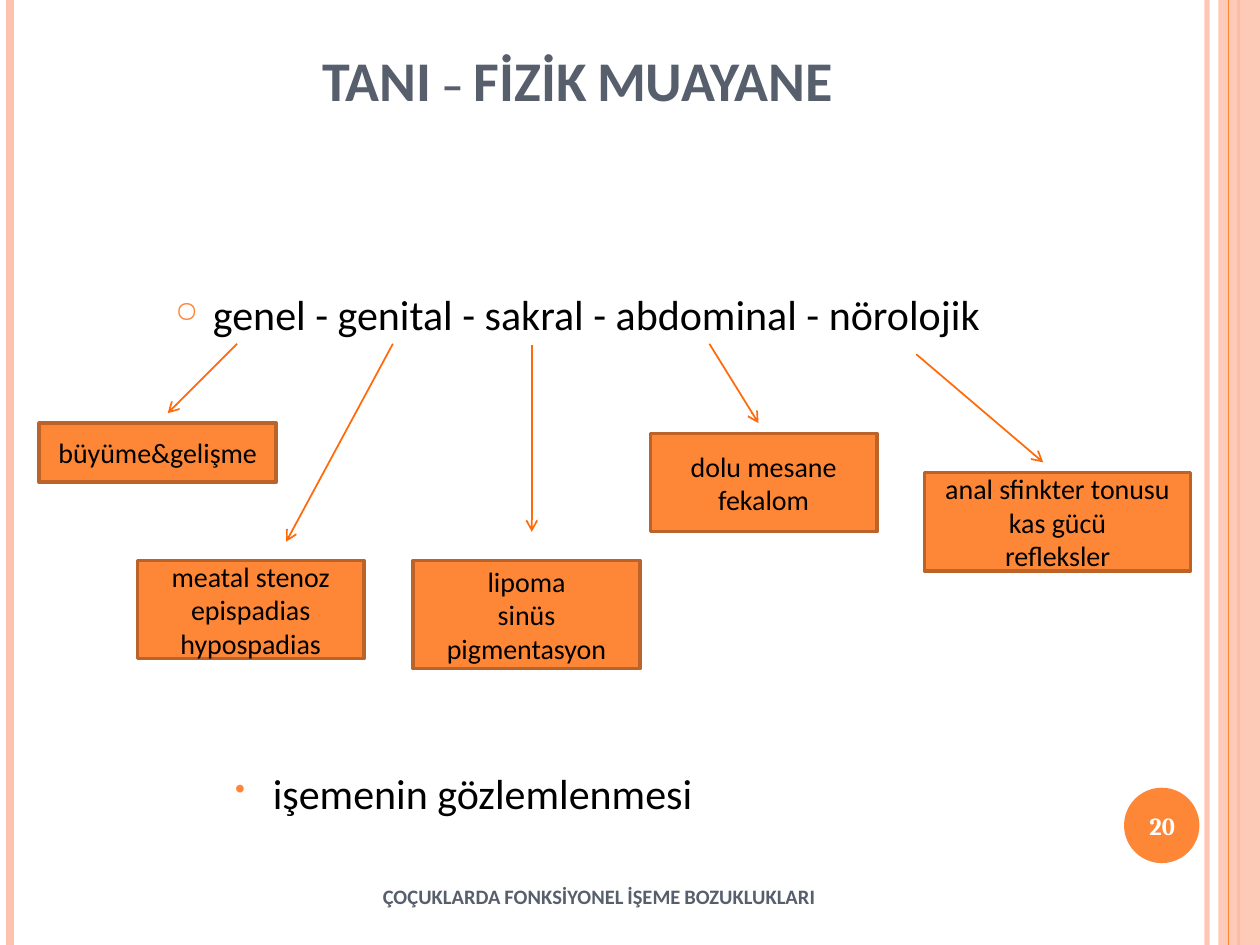
from lxml import etree
from pptx import Presentation
from pptx.dml.color import RGBColor
from pptx.enum.shapes import MSO_CONNECTOR, MSO_SHAPE
from pptx.enum.text import MSO_ANCHOR, PP_ALIGN
from pptx.oxml.ns import qn
from pptx.util import Cm, Pt

RECT, OVAL = MSO_SHAPE.RECTANGLE, MSO_SHAPE.OVAL
STRAIGHT = MSO_CONNECTOR.STRAIGHT
TOP, MIDDLE, BOTTOM = MSO_ANCHOR.TOP, MSO_ANCHOR.MIDDLE, MSO_ANCHOR.BOTTOM
LEFT, CENTER = PP_ALIGN.LEFT, PP_ALIGN.CENTER
ORANGE, PEACH, SLATE = "FE8637", "FEC3AE", "575F6D"
BLACK, WHITE, RUST, FLAME = "000000", "FFFFFF", "BC6329", "FF6B0A"
HEIGHT = 19.05

RULES = [(24.33, PEACH, 3, 93), (0.2, PEACH, 4.5, 100), (24.97, ORANGE, 1.5, 100)]
ARROWS = [
    (4.78, 6.93, 3.38, 8.33),
    (7.92, 6.93, 5.77, 10.92),
    (10.72, 6.96, 10.72, 10.72),
    (14.3, 6.93, 15.29, 8.53),
    (18.47, 7.14, 21.03, 9.32),
]
FINDINGS = [
    ((0.79, 8.53, 4.78, 1.19), ["büyüme&gelişme"]),
    ((2.77, 11.3, 4.57, 1.98), ["meatal stenoz", "epispadias", "hypospadias"]),
    ((8.33, 11.3, 4.57, 2.18), ["lipoma", "sinüs", "pigmentasyon"]),
    ((13.11, 8.74, 4.57, 1.98), ["dolu mesane fekalom"]),
    ((18.64, 9.53, 5.36, 1.98), ["anal sfinkter tonusu", "kas gücü", "refleksler"]),
]
EXAMS = [
    ("genel - genital - sakral - abdominal - nörolojik", "○", CENTER, 0.76, 0),
    ("işemenin gözlemlenmesi", "•", LEFT, 3.98, 245),
]


def paint(target, color, alpha=100):
    """Give a fill a solid colour with an opacity in percent."""
    target.solid()
    target.fore_color.rgb = RGBColor.from_string(color)
    if alpha < 100:
        tint = target.fore_color._xFill[0]
        etree.SubElement(tint, qn("a:alpha"), val=str(alpha * 1000))


def add_line(slide, ends, color, width, alpha=100, arrow=False):
    """Draw a straight line, with an open arrowhead if asked."""
    line = slide.shapes.add_connector(STRAIGHT, *map(Cm, ends))
    paint(line.line.fill, color, alpha)
    line.line.width = Pt(width)
    if arrow:
        etree.SubElement(line.line._get_or_add_ln(), qn("a:tailEnd"), type="arrow")
    etree.SubElement(line._element.spPr, qn("a:effectLst"))


def add_shape(slide, kind, area, fill, alpha=100, edge=None):
    """Draw a filled preset shape, outlined if an edge colour is given."""
    shape = slide.shapes.add_shape(kind, *map(Cm, area))
    shape.shadow.inherit = False
    paint(shape.fill, fill, alpha)
    if edge:
        paint(shape.line.fill, edge)
        shape.line.width = Pt(2)
    else:
        shape.line.fill.background()
    return shape


def add_run(para, text, size, color, font="Calibri", bold=False, small=False):
    """Add one styled run to a paragraph."""
    run = para.add_run()
    run.text = text
    run.font.name, run.font.size, run.font.bold = font, Pt(size), bold
    run.font.color.rgb = RGBColor.from_string(color)
    if small:
        run.font._element.set("cap", "small")


def write(shape, lines, anchor, size, color, **style):
    """Fill a shape with centred lines of text."""
    frame = shape.text_frame
    frame.word_wrap, frame.vertical_anchor = True, anchor
    for i, text in enumerate(lines):
        para = frame.add_paragraph() if i else frame.paragraphs[0]
        para.alignment = CENTER
        add_run(para, text, size, color, **style)


def add_text(slide, area, text, anchor, size, color, **style):
    """Add a text box with one centred line."""
    box = slide.shapes.add_textbox(*map(Cm, area))
    write(box, [text], anchor, size, color, **style)


def add_bullet(para, mark, indent):
    """Give a paragraph a small orange bullet and a hanging indent."""
    props = para._p.get_or_add_pPr()
    props.set("marL", str(Cm(indent)))
    props.set("indent", str(-Cm(0.76)))
    tint = etree.SubElement(props, qn("a:buClr"))
    etree.SubElement(tint, qn("a:srgbClr"), val=ORANGE)
    etree.SubElement(props, qn("a:buSzPct"), val="70000")
    etree.SubElement(props, qn("a:buChar"), char=mark)


def add_exams(slide):
    """Add the bulleted list of examinations."""
    box = slide.shapes.add_textbox(Cm(1.27), Cm(5.69), Cm(20.75), Cm(12.29))
    frame = box.text_frame
    frame.word_wrap, frame.vertical_anchor = True, TOP
    for i, (text, mark, align, indent, gap) in enumerate(EXAMS):
        para = frame.add_paragraph() if i else frame.paragraphs[0]
        para.alignment, para.space_before = align, Pt(gap)
        add_bullet(para, mark, indent)
        add_run(para, text, 24, BLACK)


def add_frame(slide):
    """Draw the side stripes and the page number disc."""
    for x, color, width, alpha in RULES:
        add_line(slide, (x, 0, x, HEIGHT), color, width, alpha)
    add_shape(slide, RECT, (24.56, 0, 0.84, HEIGHT), PEACH, 87)
    add_line(slide, (24.77, 0, 24.77, HEIGHT), ORANGE, 0.75)
    add_shape(slide, OVAL, (22.66, 15.88, 1.52, 1.52), ORANGE)


def main():
    """Build and save the slide."""
    deck = Presentation()
    deck.slide_width, deck.slide_height = Cm(25.4), Cm(HEIGHT)
    slide = deck.slides.add_slide(deck.slide_layouts[6])
    add_frame(slide)
    add_text(slide, (1.27, -0.79, 20.75, 3.18), "TANI – FİZİK MUAYANE",
             BOTTOM, 32, SLATE, bold=True, small=True)
    add_exams(slide)
    add_text(slide, (22.58, 15.93, 1.7, 1.45), "20",
             MIDDLE, 14, WHITE, font="Cambria", bold=True)
    for ends in ARROWS:
        add_line(slide, ends, FLAME, 1, arrow=True)
    for area, lines in FINDINGS:
        box = add_shape(slide, RECT, area, ORANGE, edge=RUST)
        write(box, lines, MIDDLE, 16, BLACK)
    add_text(slide, (1.7, 17.42, 20.75, 1.02),
             "ÇOÇUKLARDA FONKSİYONEL İŞEME BOZUKLUKLARI",
             BOTTOM, 11.7, SLATE, bold=True, small=True)
    deck.save("out.pptx")


if __name__ == "__main__":
    main()
